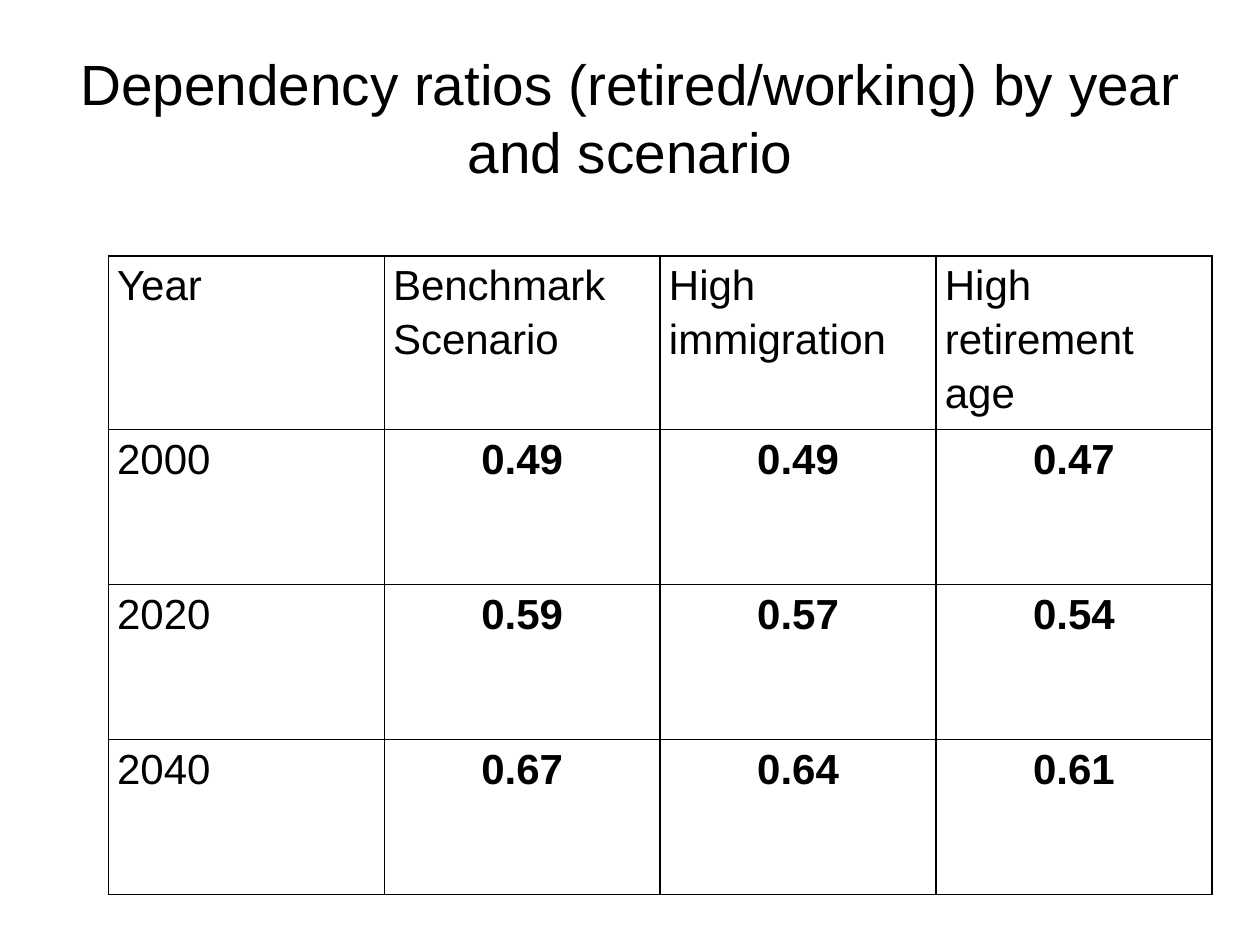
"""Build a slide with a table of dependency ratios by year and scenario."""
from lxml import etree
from pptx import Presentation
from pptx import util as u
from pptx.dml import color
from pptx.enum import text
from pptx.oxml import ns

COLORS = {"ink": "000000", "paper": "FFFFFF"}
ROWS = [
    ["Year", "Benchmark Scenario", "High immigration", "High retirement age"],
    ["2000", "0.49", "0.49", "0.47"],
    ["2020", "0.59", "0.57", "0.54"],
    ["2040", "0.67", "0.64", "0.61"],
]
COLUMN_WIDTH, ROW_HEIGHT = u.Inches(2.19), u.Inches(1.23)
CELL_FORMAT = {"margin_left": u.Inches(0.07), "margin_right": u.Inches(0.07),
               "margin_top": 0, "margin_bottom": 0}


def write(paragraph, words, size, bold=False, **layout):
    run = paragraph.add_run()
    run.text = words
    for name, value in {"name": "Arial", "size": u.Pt(size), "bold": bold}.items():
        setattr(run.font, name, value)
    run.font.color.rgb = color.RGBColor.from_string(COLORS["ink"])
    for name, value in layout.items():
        setattr(paragraph, name, value)


def add_borders(cell):
    properties = cell._tc.get_or_add_tcPr()
    for position, side in enumerate(("lnL", "lnR", "lnT", "lnB")):
        line = etree.Element(ns.qn(f"a:{side}"), w=str(u.Pt(1)))
        fill = etree.SubElement(line, ns.qn("a:solidFill"))
        etree.SubElement(fill, ns.qn("a:srgbClr"), val=COLORS["ink"])
        properties.insert(position, line)


presentation = Presentation()
presentation.slide_width, presentation.slide_height = u.Inches(10), u.Inches(7.5)
slide = presentation.slides.add_slide(presentation.slide_layouts[6])
slide.background.fill.solid()
slide.background.fill.fore_color.rgb = color.RGBColor.from_string(COLORS["paper"])

width, height = presentation.slide_width, presentation.slide_height
title = slide.shapes.add_textbox(int(width * 0.05), int(height * 0.04),
                                 int(width * 0.9), u.Inches(1.25))
frame_format = {"word_wrap": True, "vertical_anchor": text.MSO_ANCHOR.MIDDLE}
for name, value in frame_format.items():
    setattr(title.text_frame, name, value)
write(title.text_frame.paragraphs[0],
      "Dependency ratios (retired/working) by year and scenario",
      32.4, alignment=text.PP_ALIGN.CENTER)

table = slide.shapes.add_table(len(ROWS), len(ROWS[0]), u.Inches(0.86), u.Inches(2.03),
                               COLUMN_WIDTH * len(ROWS[0]), ROW_HEIGHT * len(ROWS)).table
table.first_row = table.horz_banding = False
for row_index, values in enumerate(ROWS):
    table.rows[row_index].height = ROW_HEIGHT
    for column_index, value in enumerate(values):
        table.columns[column_index].width = COLUMN_WIDTH
        cell = table.cell(row_index, column_index)
        for name, setting in CELL_FORMAT.items():
            setattr(cell, name, setting)
        cell.fill.background()
        add_borders(cell)
        is_ratio = row_index > 0 and column_index > 0
        alignment = text.PP_ALIGN.CENTER if is_ratio else text.PP_ALIGN.LEFT
        write(cell.text_frame.paragraphs[0], value, 24, is_ratio,
              alignment=alignment, line_spacing=1.15)

presentation.save("out.pptx")
